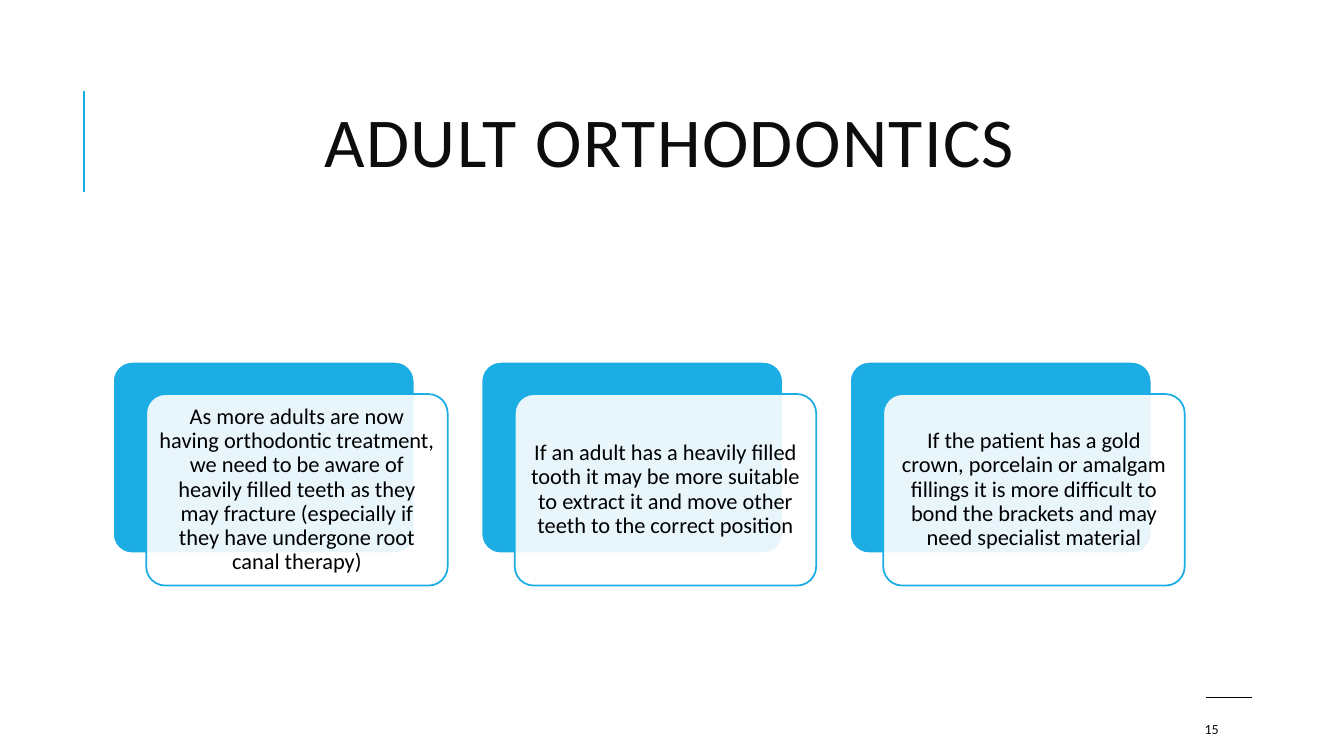
"""Build the adult orthodontics slide with three layered cards."""
from lxml.etree import SubElement
from pptx import Presentation
from pptx.dml.color import RGBColor
from pptx.enum.shapes import MSO_CONNECTOR, MSO_SHAPE
from pptx.enum.text import MSO_ANCHOR, PP_ALIGN
from pptx.oxml.ns import qn
from pptx.util import Inches, Pt

BLUE = RGBColor(0x1C, 0xAD, 0xE4)
WHITE = RGBColor(0xFF, 0xFF, 0xFF)
BLACK = RGBColor(0x00, 0x00, 0x00)
INK = RGBColor(0x0D, 0x0D, 0x0D)

LEFT, TOP, PITCH = 1.12, 3.59, 3.655
WIDE, HIGH = 2.99, 1.9
SHIFT = (0.33, 0.32)

CARDS = [
    "As more adults are now having orthodontic treatment, we need to be aware of "
    "heavily filled teeth as they may fracture (especially if they have undergone "
    "root canal therapy)",
    "If an adult has a heavily filled tooth it may be more suitable to extract it "
    "and move other teeth to the correct position",
    "If the patient has a gold crown, porcelain or amalgam fillings it is more "
    "difficult to bond the brackets and may need specialist material",
]

deck = Presentation()
deck.slide_width, deck.slide_height = Inches(13.33), Inches(7.5)
slide = deck.slides.add_slide(deck.slide_layouts[6])
shapes = slide.shapes


def write(shape, text, size, color):
    """Put one run in the shape and return its paragraph."""
    frame = shape.text_frame
    frame.word_wrap = True
    frame.vertical_anchor = MSO_ANCHOR.MIDDLE
    para = frame.paragraphs[0]
    run = para.add_run()
    run.text = text
    run.font.name, run.font.size = "Calibri", Pt(size)
    run.font.color.rgb = color
    return para


def panel(x, y, fill, edge):
    """Add a rounded panel of the card size."""
    shape = shapes.add_shape(MSO_SHAPE.ROUNDED_RECTANGLE, Inches(x), Inches(y),
                             Inches(WIDE), Inches(HIGH))
    shape.adjustments[0] = 0.1
    shape.shadow.inherit = False
    shape.fill.solid()
    shape.fill.fore_color.rgb = fill
    shape.line.color.rgb = edge
    shape.line.width = Pt(1.25)
    return shape


for x1, y1, x2, y2, color, width in [
    (0.83, 1.9, 0.83, 0.9, BLUE, 1.5),
    (11.96, 6.92, 12.42, 6.92, BLACK, 1.25),
]:
    rule = shapes.add_connector(MSO_CONNECTOR.STRAIGHT, Inches(x1), Inches(y1),
                                Inches(x2), Inches(y2))
    rule.line.color.rgb = color
    rule.line.width = Pt(width)
    SubElement(rule._element.spPr, qn("a:effectLst"))

title = shapes.add_textbox(Inches(LEFT), Inches(0.64), Inches(10.63), Inches(1.64))
para = write(title, "ADULT ORTHODONTICS", 50, INK)
para.line_spacing = 0.8
para._p.get_or_add_pPr().set("marL", str(Inches(2)))
para.runs[0].font._element.set("spc", "100")

number = shapes.add_textbox(Inches(11.85), Inches(7.08), Inches(1.06), Inches(0.3))
write(number, "15", 10, INK)

for col, text in enumerate(CARDS):
    x = LEFT + col * PITCH
    panel(x, TOP, BLUE, WHITE)
    front = panel(x + SHIFT[0], TOP + SHIFT[1], WHITE, BLUE)
    tint = front._element.spPr.find(qn("a:solidFill"))[0]
    SubElement(tint, qn("a:alpha")).set("val", "90000")
    frame = front.text_frame
    frame.margin_left = frame.margin_right = Inches(0.07)
    frame.margin_top = frame.margin_bottom = Inches(0.07)
    para = write(front, text, 16, BLACK)
    para.alignment = PP_ALIGN.CENTER
    para.line_spacing = 0.9

deck.save("out.pptx")
